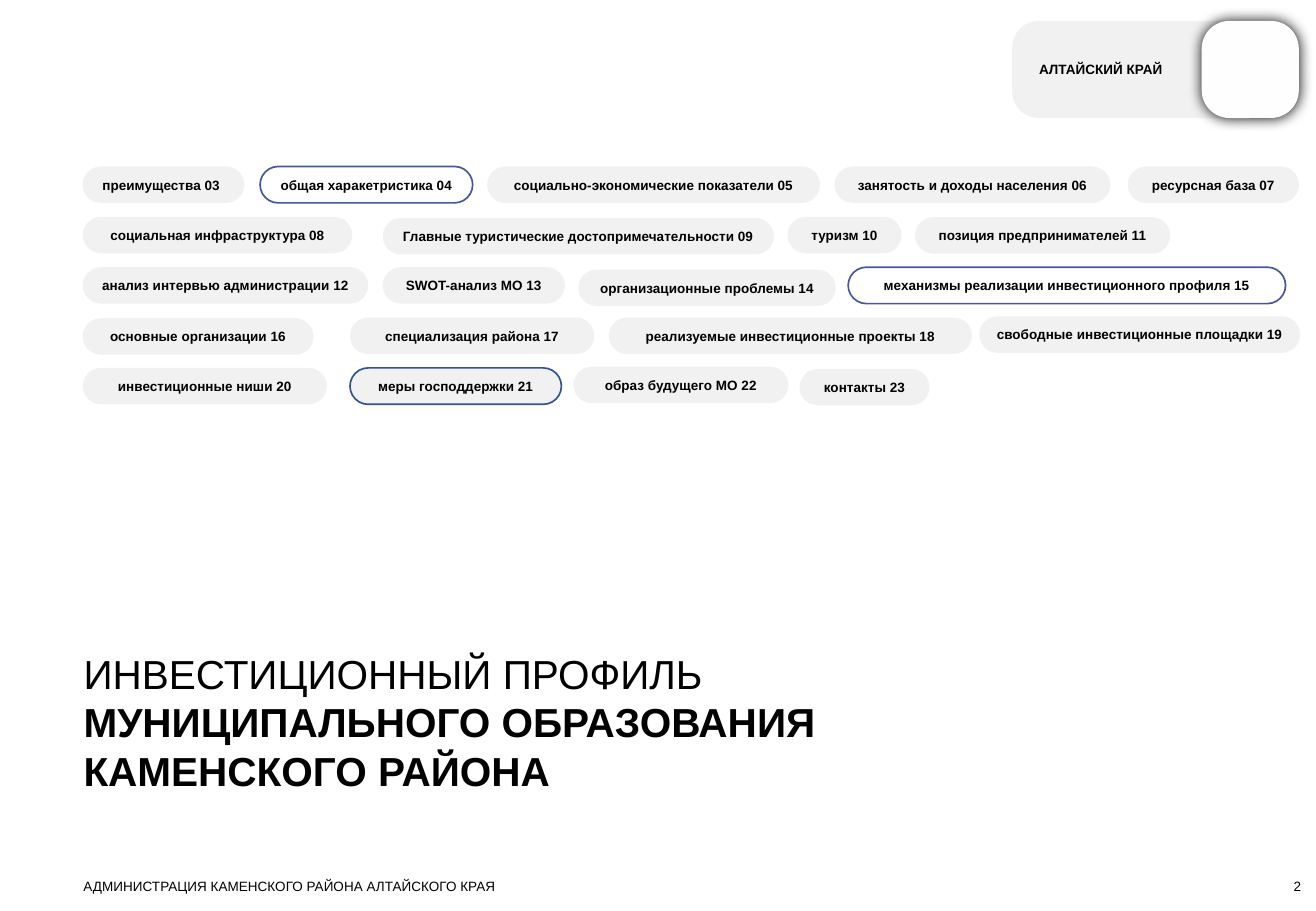
from dataclasses import dataclass

from lxml.etree import SubElement
from pptx import Presentation
from pptx.dml.color import RGBColor
from pptx.enum.shapes import MSO_SHAPE as SHAPE
from pptx.enum.text import MSO_ANCHOR as ANCHOR, MSO_AUTO_SIZE as AUTO, PP_ALIGN as ALIGN
from pptx.oxml.ns import qn
from pptx.util import Pt

# text, left, width, vertical nudge, look
ROWS = [
    [("преимущества 03", 49, 95.8, 0, "first"),
     ("общая харакетристика 04", 154.1, 126, 0, "outlined"),
     ("социально-экономические показатели 05", 288.7, 197.3, 0, "plain"),
     ("занятость и доходы населения 06", 494.6, 163.4, 0, "plain"),
     ("ресурсная база 07", 668.2, 101.5, 0, "plain")],
    [("социальная инфраструктура 08", 49, 159.8, 0, "plain"),
     ("Главные туристические достопримечательности 09", 226.8, 231.8, 0.7, "plain"),
     ("туризм 10", 466.6, 67.7, 0, "plain"),
     ("позиция предпринимателей 11", 542.2, 151.2, 0.2, "plain")],
    [("анализ интервью администрации 12", 49, 169.2, 0, "plain"),
     ("SWOT-анализ МО 13", 226.8, 108, 0, "plain"),
     ("организационные проблемы 14", 342.7, 152.6, 1.4, "plain"),
     ("механизмы реализации инвестиционного профиля 15", 502.6, 259.2, 0, "outlined")],
    [("основные организации 16", 49, 136.8, 0.4, "plain"),
     ("специализация района 17", 207.4, 144.7, 0, "plain"),
     ("реализуемые инвестиционные проекты 18", 360.7, 215.3, 0, "plain"),
     ("свободные инвестиционные площадки 19", 580.3, 190.1, -0.7, "plain")],
    [("инвестиционные ниши 20", 49, 144.7, 0, "plain"),
     ("меры господдержки 21", 207.4, 125.3, 0, "current"),
     ("образ будущего МО 22", 339.8, 127.4, -0.7, "plain"),
     ("контакты 23", 473.8, 77, 0.6, "plain")],
]
TITLE = ["ИНВЕСТИЦИОННЫЙ ПРОФИЛЬ", "МУНИЦИПАЛЬНОГО ОБРАЗОВАНИЯ КАМЕНСКОГО РАЙОНА"]
REGION = "АЛТАЙСКИЙ КРАЙ"
FOOTER = "АДМИНИСТРАЦИЯ КАМЕНСКОГО РАЙОНА АЛТАЙСКОГО КРАЯ"
PAGE = "2"
ROW_TOP, ROW_STEP, CHIP_HEIGHT = 98.7, 29.85, 21.6


@dataclass(frozen=True)
class Theme:
    font: str = "Arial"
    text: str = "000000"
    chip: str = "F1F1F1"
    badge: str = "FEFEFE"
    outline: str = "4756A0"
    current: str = "2F5597"
    small: float = 8
    title: float = 24


T = Theme()
LOOKS = {"plain": (T.chip, None), "first": (T.chip, None),
         "outlined": (None, T.outline), "current": (T.chip, T.current)}


def set_text(s, lines, size, bold, align=ALIGN.LEFT, anchor=ANCHOR.MIDDLE, insets=(0, 0, 0, 0)):
    """Write lines into a shape; bold holds one flag for each line."""
    tf = s.text_frame
    tf.text = "\n".join(lines)
    tf.word_wrap, tf.auto_size, tf.vertical_anchor = True, AUTO.NONE, anchor
    tf.margin_left, tf.margin_top, tf.margin_right, tf.margin_bottom = map(Pt, insets)
    for p, heavy in zip(tf.paragraphs, bold):
        p.alignment = align
        for r in p.runs:
            r.font.name, r.font.size, r.font.bold = T.font, Pt(size), heavy
            r.font.color.rgb = RGBColor.from_string(T.text)


def add_pill(slide, box, radius, fill, line=None):
    """Add a flat rounded rectangle."""
    s = slide.shapes.add_shape(SHAPE.ROUNDED_RECTANGLE, *map(Pt, box))
    s.adjustments[0] = radius
    s.shadow.inherit = False
    if fill:
        s.fill.solid()
        s.fill.fore_color.rgb = RGBColor.from_string(fill)
    else:
        s.fill.background()
    if line:
        s.line.color.rgb = RGBColor.from_string(line)
        s.line.width = Pt(1)
    else:
        s.line.fill.background()
    return s


def add_glow(s, blur, alpha):
    """Give a shape a soft centred shadow."""
    effects = s._element.spPr.find(qn("a:effectLst"))
    shadow = SubElement(effects, qn("a:outerShdw"), blurRad=str(Pt(blur)), dist="0",
                        dir="0", algn="ctr", rotWithShape="0")
    color = SubElement(shadow, qn("a:srgbClr"), val=T.text)
    SubElement(color, qn("a:alpha"), val=str(alpha * 1000))


def add_label(slide, box, text, align, anchor):
    """Add a small line of text."""
    s = slide.shapes.add_textbox(*map(Pt, box))
    set_text(s, [text], T.small, [False], align, anchor)


def main():
    """Build the contents slide."""
    prs = Presentation()
    prs.slide_width, prs.slide_height = Pt(779.8), Pt(540)
    slide = prs.slides.add_slide(prs.slide_layouts[5])

    for i, row in enumerate(ROWS):
        for text, left, width, nudge, look in row:
            box = (left, ROW_TOP + i * ROW_STEP + nudge, width, CHIP_HEIGHT)
            s = add_pill(slide, box, 0.5, *LOOKS[look])
            first = look == "first"
            set_text(s, [text], T.small, [True], ALIGN.LEFT if first else ALIGN.CENTER,
                     insets=(8.6 if first else 0, 0, 0, 0))

    s = add_pill(slide, (599.8, 12.4, 169.9, 57.6), 0.275, T.chip)
    set_text(s, [REGION], T.small, [True], insets=(11.3, 3.6, 56.7, 3.6))
    s = add_pill(slide, (712.1, 12.4, 57.6, 57.6), 0.286, T.badge)
    add_glow(s, 8.4, 92)

    title = slide.shapes.title
    title.left, title.top, title.width, title.height = map(Pt, (49.5, 384.5, 576, 87.1))
    set_text(title, TITLE, T.title, [False, True], anchor=ANCHOR.TOP)
    for p in title.text_frame.paragraphs:
        p.line_spacing, p.space_before = Pt(28.8), Pt(0)

    add_label(slide, (49.5, 520.6, 576, 9.4), FOOTER, ALIGN.LEFT, ANCHOR.TOP)
    add_label(slide, (713.5, 520.6, 57.6, 9.4), PAGE, ALIGN.RIGHT, ANCHOR.BOTTOM)
    prs.save("out.pptx")


if __name__ == "__main__":
    main()
